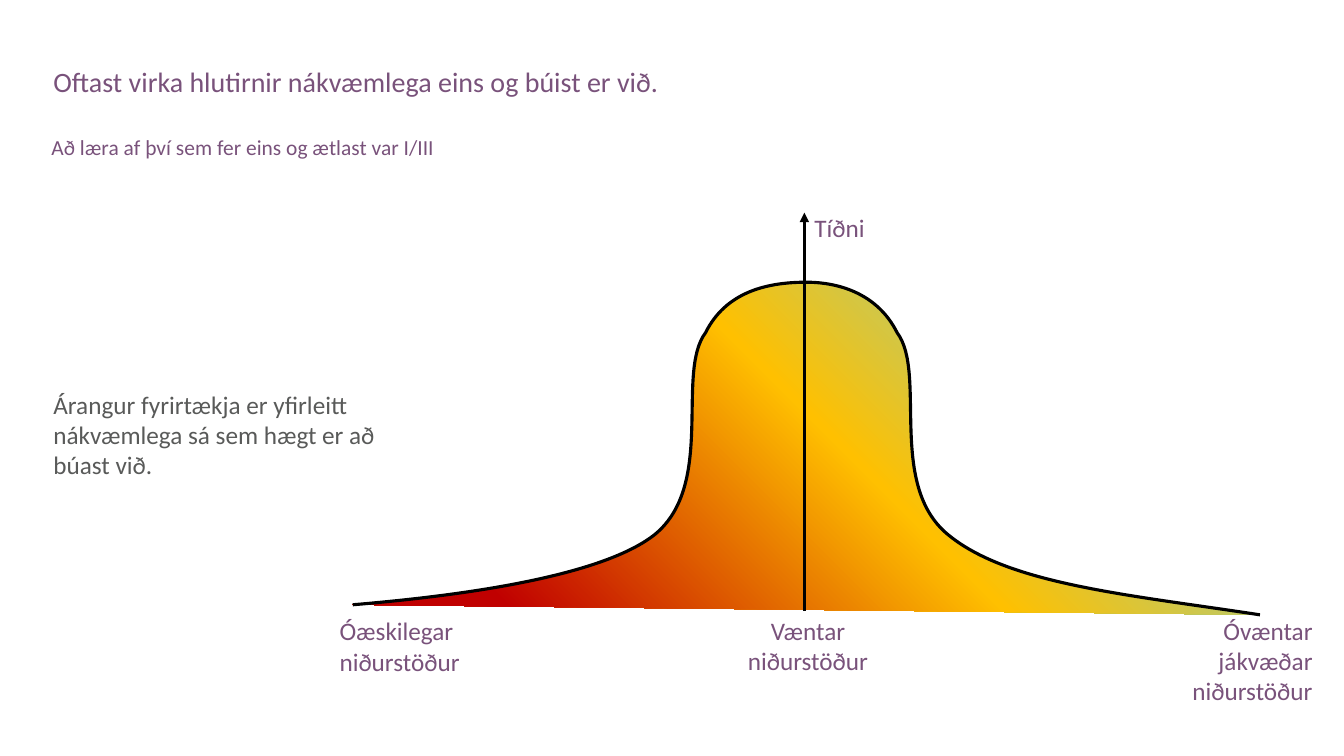
from lxml.etree import SubElement
from pptx import Presentation
from pptx.dml.color import RGBColor
from pptx.enum.shapes import MSO_CONNECTOR as Connector
from pptx.enum.text import MSO_ANCHOR as Anchor, MSO_AUTO_SIZE as AutoSize, PP_ALIGN as Align
from pptx.oxml import parse_xml
from pptx.oxml.ns import nsdecls, qn
from pptx.util import Inches, Pt

COLORS = {"plum": "79527B", "grey": "595A59", "black": "000000",
          "red": "C00000", "amber": "FFC000", "teal": "81D1C5"}
CELL = Inches(0.1)  # square grid, 133.33 columns by 75 rows


def cells(*counts):
    return [round(count * CELL) for count in counts]


def write(box, area, text, size, color, align=Align.LEFT, anchor=Anchor.TOP):
    """Place a box on the grid and fill it with one formatted paragraph."""
    box.left, box.top, box.width, box.height = cells(*area)
    frame = box.text_frame
    frame.text = text
    frame.word_wrap = True
    frame.auto_size = AutoSize.NONE
    frame.vertical_anchor = anchor
    paragraph = frame.paragraphs[0]
    paragraph.alignment = align
    paragraph.space_before = Pt(0)
    font = paragraph.runs[0].font
    font.name, font.size = "Calibri", Pt(size)
    font.color.rgb = RGBColor.from_string(COLORS[color])
    return paragraph


prs = Presentation()
prs.slide_width, prs.slide_height = cells(133.33, 75)
slide = prs.slides.add_slide(prs.slide_layouts[3])
headline, statement, subtitle = slide.placeholders

# Title and body texts
headline_line = write(headline, (4.3, 6.3, 125.4, 6.4),
                      "Oftast virka hlutirnir nákvæmlega eins og búist er við.", 20, "plum")
headline_line.line_spacing = 0.9
subtitle_line = write(subtitle, (4.1, 13.5, 125.6, 2.8),
                      "Að læra af því sem fer eins og ætlast var I/III", 15.3, "plum")
subtitle_line.line_spacing = 0.7
statement_line = write(
    statement, (4.3, 17.9, 34.9, 50.4),
    "Árangur fyrirtækja er yfirleitt nákvæmlega sá sem hægt er að búast við.",
    18, "grey", anchor=Anchor.MIDDLE)
for line in (subtitle_line, statement_line):
    properties = line._p.get_or_add_pPr()
    properties.set("marL", "0")
    properties.set("indent", "0")
    SubElement(properties, qn("a:buNone"))

# Frequency curve: a start, then two control points and an end per arc
curve_points = [
    (34.6, 60.5),
    (47.1, 58.9), (59.5, 57.3), (65.4, 52.7),
    (71.3, 48.1), (67.4, 37.1), (69.8, 33),
    (72.2, 28.8), (76.5, 28), (79.8, 28),
    (83, 28), (87, 28.8), (89.3, 33),
    (91.6, 37.1), (87.8, 48.3), (93.7, 52.9),
    (99.6, 57.5), (112.1, 59), (124.7, 60.6),
]
builder = slide.shapes.build_freeform(*curve_points[0], scale=float(CELL))
builder.add_line_segments(curve_points[1:], close=False)
curve = builder.convert_to_shape()
curve.shadow.inherit = False

# Turn every three straight segments into one Bézier arc
outline = curve._element.spPr.find(".//" + qn("a:path"))
segments = outline.findall(qn("a:lnTo"))
for first in range(0, len(segments), 3):
    arc = SubElement(outline, qn("a:cubicBezTo"))
    for segment in segments[first:first + 3]:
        arc.append(segment[0])
        outline.remove(segment)

# Gradient spreading from the lower left corner
stops = [(0, "red"), (13, "red"), (53, "amber"), (92, "teal"), (100, "teal")]
stop_xml = "".join(f'<a:gs pos="{share * 1000}"><a:srgbClr val="{COLORS[name]}"/></a:gs>'
                   for share, name in stops)
curve._element.spPr.find(qn("a:custGeom")).addnext(parse_xml(
    f'<a:gradFill {nsdecls("a")} rotWithShape="1"><a:gsLst>{stop_xml}</a:gsLst>'
    '<a:path path="circle"><a:fillToRect t="100000" r="100000"/></a:path></a:gradFill>'))

# Frequency axis
axis = slide.shapes.add_connector(Connector.STRAIGHT, *cells(79.8, 60.6, 79.8, 21.1))
for stroke in (curve.line, axis.line):
    stroke.color.rgb = RGBColor.from_string(COLORS["black"])
    stroke.width = Pt(2.25)
SubElement(axis.line._get_or_add_ln(), qn("a:tailEnd"), type="triangle")
SubElement(axis._element.spPr, qn("a:effectLst"))

# Axis and outcome labels
labels = [
    ("Tíðni", (79.8, 20.6, 19, 4), Align.LEFT),
    ("Óæskilegar niðurstöður", (32.7, 60.6, 14.5, 7.1), Align.LEFT),
    ("Væntar niðurstöður", (72.9, 60.5, 14.5, 7.1), Align.CENTER),
    ("Óvæntar jákvæðar niðurstöður", (116.7, 60.5, 14.5, 10.1), Align.RIGHT),
]
for text, area, align in labels:
    write(slide.shapes.add_textbox(*cells(*area)), area, text, 18, "plum", align)

prs.save("out.pptx")
